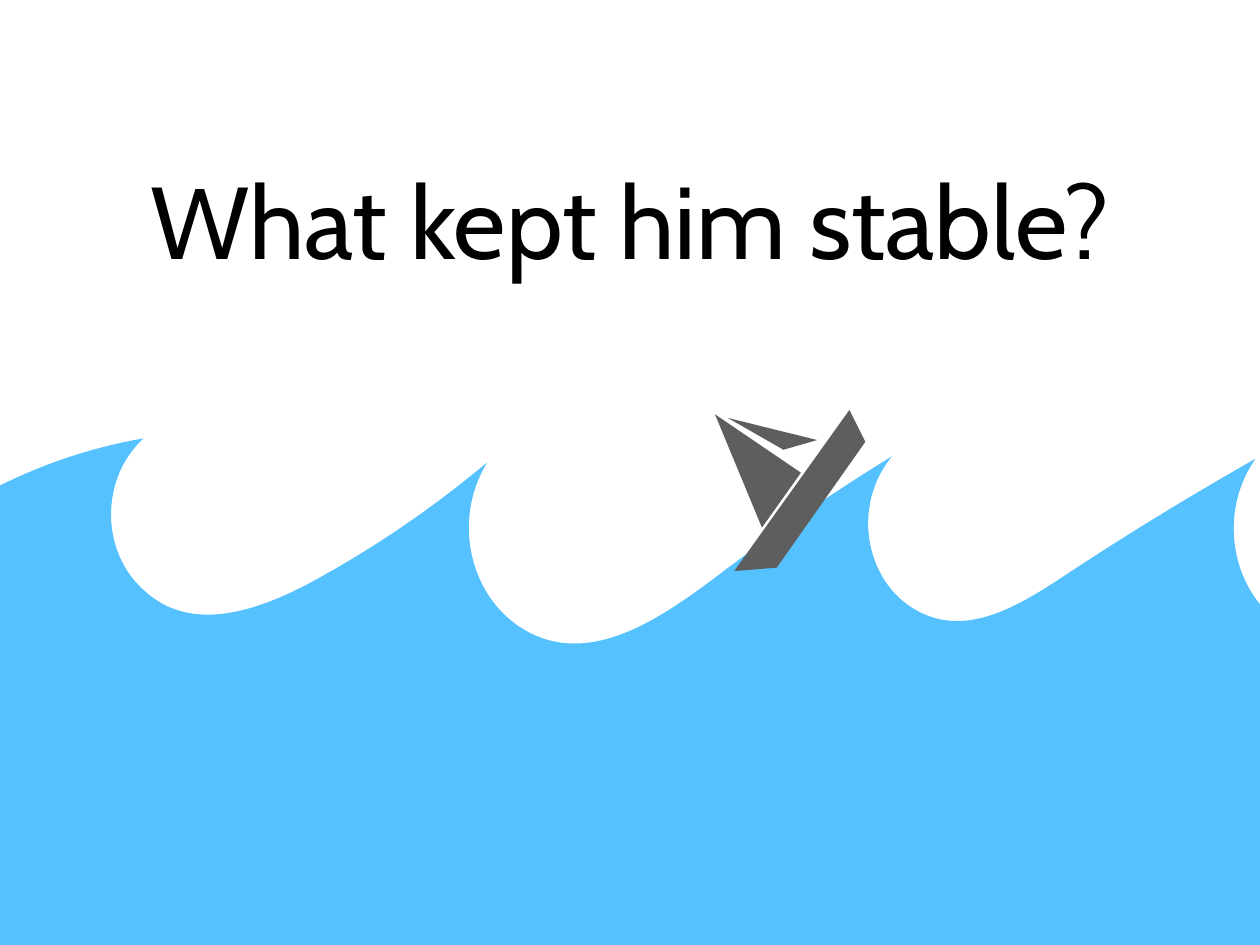
from dataclasses import dataclass
from math import cos, radians, sin

from pptx import Presentation
from pptx.dml.color import RGBColor
from pptx.enum.text import MSO_ANCHOR, MSO_AUTO_SIZE, PP_ALIGN
from pptx.oxml.xmlchemy import OxmlElement
from pptx.util import Inches, Pt

MIDDLE = MSO_ANCHOR.MIDDLE
NO_FIT = MSO_AUTO_SIZE.NONE
CENTER = PP_ALIGN.CENTER
TITLE_ONLY = 5
TILT = 333.9

Point = tuple[float, float]


@dataclass(frozen=True)
class Theme:
    sea: RGBColor = RGBColor(0x56, 0xC1, 0xFF)
    boat: RGBColor = RGBColor(0x5E, 0x5E, 0x5E)
    ink: RGBColor = RGBColor(0, 0, 0)
    font: str = "Cabin"
    size: Pt = Pt(83)


@dataclass(frozen=True)
class Part:
    """A boat part: the centre it turns about and its corners as seen."""
    hub: Point
    points: list[Point]


THEME = Theme()

# Each curve runs from the end of the one before: two handles, then its end.
START = (-2.18, 7.28)
CURVES = [
    ((-1.79, 6.77), (-1.33, 6.33), (-0.82, 5.97)),
    ((-0.08, 5.45), (0.75, 5.1), (1.62, 4.95)),
    ((1.13, 5.4), (1.13, 6.23), (1.63, 6.67)),
    ((2.15, 7.15), (2.89, 6.91), (3.52, 6.57)),
    ((4.22, 6.19), (4.88, 5.74), (5.5, 5.22)),
    ((5.08, 5.9), (5.32, 6.83), (6.01, 7.16)),
    ((6.71, 7.49), (7.45, 6.99), (8.1, 6.5)),
    ((8.73, 6.02), (9.39, 5.57), (10.07, 5.15)),
    ((9.59, 5.72), (9.77, 6.64), (10.42, 6.93)),
    ((10.95, 7.17), (11.5, 6.84), (12, 6.51)),
    ((12.71, 6.04), (13.43, 5.6), (14.17, 5.18)),
    ((13.81, 5.69), (13.85, 6.41), (14.26, 6.87)),
    ((14.7, 7.37), (15.4, 7.37), (16.02, 7.14)),
    ((16.82, 6.85), (17.49, 6.24), (17.91, 5.43)),
]
SEABED = [(18.09, 19.67), (-2.74, 20.14)]

HULL = Part((8.98, 5.61), [(8.29, 6.45), (8.77, 6.41), (9.77, 4.99), (9.59, 4.63)])
MAIN = Part((8.6, 5.19), [(8.07, 4.68), (8.6, 5.96), (9.04, 5.34)])
JIB = Part((8.72, 4.85), [(8.21, 4.72), (9.22, 4.97), (8.84, 5.08)])


def turn(point: Point, hub: Point, angle: float) -> Point:
    """Turn a point clockwise about a hub, by degrees."""
    x, y = point[0] - hub[0], point[1] - hub[1]
    c, s = cos(radians(angle)), sin(radians(angle))
    return hub[0] + x * c - y * s, hub[1] + x * s + y * c


def draw(shapes, points: list[Point], color: RGBColor, angle: float = 0):
    """Draw a filled outline and return its shape."""
    first, *rest = [(Inches(x), Inches(y)) for x, y in points]
    pen = shapes.build_freeform(*first)
    pen.add_line_segments([*rest, first], close=True)
    shape = pen.convert_to_shape()
    shape.shadow.inherit = False
    shape.fill.solid()
    shape.fill.fore_color.rgb = color
    shape.line.fill.background()
    shape.rotation = angle
    return shape


def bend(shape, count: int) -> None:
    """Join the first lines of an outline, three by three, into curves."""
    lines = shape.element.xpath(".//a:lnTo")
    for start in range(0, 3 * count, 3):
        curve = OxmlElement("a:cubicBezTo")
        lines[start].addprevious(curve)
        for line in lines[start:start + 3]:
            curve.append(line[0])
            line.getparent().remove(line)


def draw_sea(shapes) -> None:
    crest = [point for curve in CURVES for point in curve]
    sea = draw(shapes, [START, *crest, *SEABED], THEME.sea)
    bend(sea, len(CURVES))


def draw_boat(shapes) -> None:
    group = shapes.add_group_shape()
    for part in (HULL, MAIN, JIB):
        level = [turn(point, part.hub, -TILT) for point in part.points]
        draw(group.shapes, level, THEME.boat, TILT)


def put(target, values: dict) -> None:
    for name, value in values.items():
        setattr(target, name, value)


def set_title(title, text: str) -> None:
    put(title, {"left": Inches(0), "top": Inches(0.83),
                "width": Inches(14.22), "height": Inches(3.27)})
    frame = title.text_frame
    frame.text = text
    put(frame, {"word_wrap": True, "auto_size": NO_FIT, "vertical_anchor": MIDDLE})
    put(frame, {f"margin_{side}": Inches(0.06)
                for side in ("left", "top", "right", "bottom")})
    line = frame.paragraphs[0]
    line.alignment = CENTER
    font = line.runs[0].font
    put(font, {"name": THEME.font, "size": THEME.size, "bold": False})
    font.color.rgb = THEME.ink
    # The title stands in front of the scene.
    title.element.getparent().append(title.element)


def main() -> None:
    deck = Presentation()
    put(deck, {"slide_width": Inches(14.22), "slide_height": Inches(10.67)})
    slide = deck.slides.add_slide(deck.slide_layouts[TITLE_ONLY])
    draw_sea(slide.shapes)
    draw_boat(slide.shapes)
    set_title(slide.shapes.title, "What kept him stable?")
    deck.save("out.pptx")


if __name__ == "__main__":
    main()
